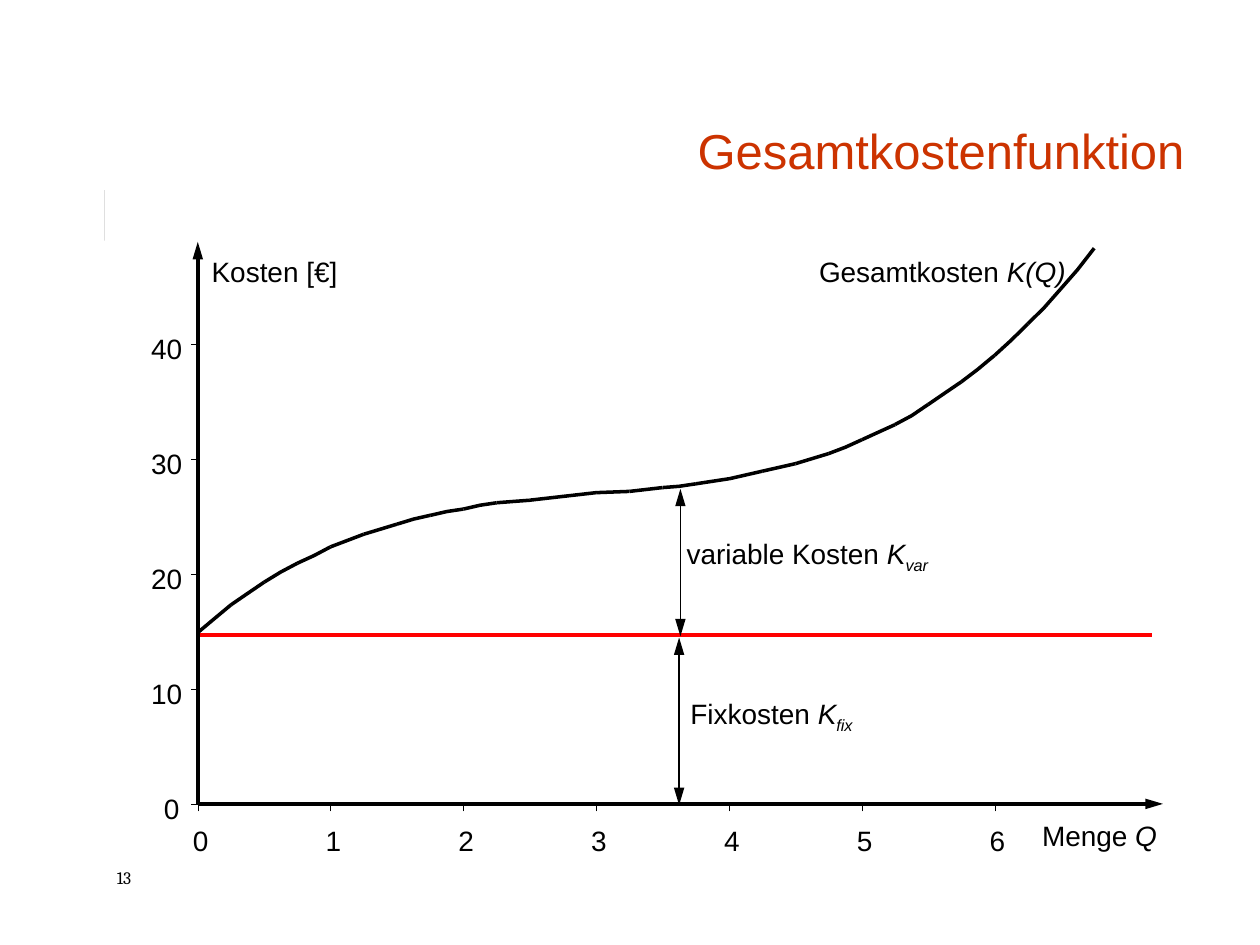
"""Build a slide showing the total cost function with fixed and variable costs."""
from lxml import etree
from pptx import Presentation
from pptx.dml.color import RGBColor
from pptx.enum.shapes import MSO_CONNECTOR, MSO_SHAPE
from pptx.enum.text import MSO_ANCHOR, PP_ALIGN
from pptx.oxml.ns import qn
from pptx.util import Inches, Pt

STRAIGHT = MSO_CONNECTOR.STRAIGHT
RECTANGLE = MSO_SHAPE.RECTANGLE
BOTTOM = MSO_ANCHOR.BOTTOM
RIGHT = PP_ALIGN.RIGHT

COLORS = {"ink": "000000", "title": "CC3300", "fixed": "FF0000"}
TITLE_ONLY = 5
X0, Y0 = 1.57, 6.38
X_STEP, Y_STEP = 1.054, 0.9125
CURVE_STEP = X_STEP / 8
CURVE_Y = [
    5.02, 4.91, 4.80, 4.71, 4.62, 4.54, 4.47, 4.41, 4.34, 4.29, 4.24,
    None, 4.16, 4.12, 4.09, 4.06, 4.04, 4.01, 3.99, 3.98, 3.97, None,
    3.94, None, 3.91, None, 3.90, None, 3.87, 3.86, 3.84, 3.82, 3.80,
    None, 3.74, None, 3.68, None, 3.60, 3.55, 3.49, 3.43, 3.37, 3.30,
    3.21, 3.12, 3.03, 2.93, 2.82, 2.70, 2.57, 2.44, 2.29, 2.14, 1.97,
]


class Deck:
    """Hold the style and the current slide, and draw each kind of element."""

    def __init__(self, slide, font="Arial", size=16):
        self.slide = slide
        self.shapes = slide.shapes
        self.font = font
        self.size = size

    def color(self, name):
        return RGBColor.from_string(COLORS[name])

    def style(self, p, size=None, color="ink", font=None):
        p.font.name = font or self.font
        p.font.size = Pt(size or self.size)
        p.font.color.rgb = self.color(color)

    def title(self, text, left, top, width, height):
        s = self.shapes.title
        s.left, s.top = Inches(left), Inches(top)
        s.width, s.height = Inches(width), Inches(height)
        tf = s.text_frame
        tf.text = text
        tf.vertical_anchor = BOTTOM
        p = tf.paragraphs[0]
        p.alignment = RIGHT
        self.style(p, 28, "title")

    def text(self, plain, left, top, width, italic="", sub="",
             inset=(0, 0), wrap=False, size=None, font=None):
        s = self.shapes.add_textbox(
            Inches(left), Inches(top), Inches(width), Inches(0.27))
        tf = s.text_frame
        tf.word_wrap = wrap
        tf.margin_left = tf.margin_right = Inches(inset[0])
        tf.margin_top = tf.margin_bottom = Inches(inset[1])
        p = tf.paragraphs[0]
        p.add_run().text = plain
        for part in filter(None, (italic, sub)):
            r = p.add_run()
            r.text = part
            r.font.italic = True
        if sub:
            r.font._element.set("baseline", "-25000")
        self.style(p, size, font=font)

    def line(self, x1, y1, x2, y2, width=2.0, color="ink", arrows=()):
        s = self.shapes.add_connector(
            STRAIGHT, Inches(x1), Inches(y1), Inches(x2), Inches(y2))
        s.line.width = Pt(width)
        s.line.color.rgb = self.color(color)
        ln = s.line._get_or_add_ln()
        for end in arrows:
            etree.SubElement(ln, qn(f"a:{end}"), type="triangle", w="med", len="lg")
        etree.SubElement(s._element.spPr, qn("a:effectLst"))

    def bend(self, points):
        pts = [(Inches(x), Inches(y)) for x, y in points]
        builder = self.shapes.build_freeform(*pts[0])
        builder.add_line_segments(pts[1:], close=False)
        s = builder.convert_to_shape()
        s.shadow.inherit = False
        s.fill.background()
        s.line.width = Pt(2)
        s.line.color.rgb = self.color("ink")

    def curve(self, points):
        for start, middle, end in zip(points[::2], points[1::2], points[2::2]):
            if middle[1] is None:
                self.line(*start, *end)
            else:
                self.bend([start, middle, end])

    def bar(self, left, top, width, height):
        s = self.shapes.add_shape(
            RECTANGLE, Inches(left), Inches(top), Inches(width), Inches(height))
        s.shadow.inherit = False
        s.fill.solid()
        s.fill.fore_color.rgb = self.color("ink")
        s.line.fill.background()


def main():
    prs = Presentation()
    prs.slide_width, prs.slide_height = Inches(10), Inches(7.5)
    deck = Deck(prs.slides.add_slide(prs.slide_layouts[TITLE_ONLY]))

    deck.text("13", 0.83, 6.83, 0.67, inset=(0.1, 0.05), wrap=True,
              size=10, font="Cambria")
    deck.line(X0, 5.04, 9.14, 5.04, color="fixed")
    deck.title("Gesamtkostenfunktion", 2.09, 0.42, 7.41, 1.05)
    deck.bar(0.83, 1.51, 0, 0.4)

    for i in range(5):
        y = Y0 - i * Y_STEP
        deck.line(X0 - 0.05, y, X0, y, width=0.1)
        left, width = (1.2, 0.25) if i else (1.3, 0.12)
        deck.text(str(i * 10), left, y - 0.1, width)
    for i in range(7):
        x = X0 + i * X_STEP
        deck.line(x, Y0 + 0.06, x, Y0, width=0.1)
        deck.text(str(i), x - 0.04, 6.54, 0.12)

    deck.curve([(X0 + i * CURVE_STEP, y) for i, y in enumerate(CURVE_Y)])

    deck.text("Menge ", 8.27, 6.5, 0.98, italic="Q")
    deck.text("Gesamtkosten ", 6.5, 2.02, 2.05, italic="K(Q)")
    deck.text("Kosten [€]", 1.68, 2.02, 4.19, wrap=True)
    deck.line(X0, Y0, X0, 1.92, arrows=["tailEnd"])
    deck.line(X0, Y0, 9.23, Y0, arrows=["tailEnd"])

    deck.text("Fixkosten ", 5.48, 5.53, 1.32, italic="K", sub="fix")
    deck.text("variable Kosten ", 5.45, 4.26, 1.96, italic="K", sub="var")
    for x, top, bottom in ((5.39, 5.06, 6.39), (5.4, 3.88, 5.05)):
        deck.line(x, top, x, bottom, width=0.75, arrows=["headEnd", "tailEnd"])

    prs.save("out.pptx")


if __name__ == "__main__":
    main()
